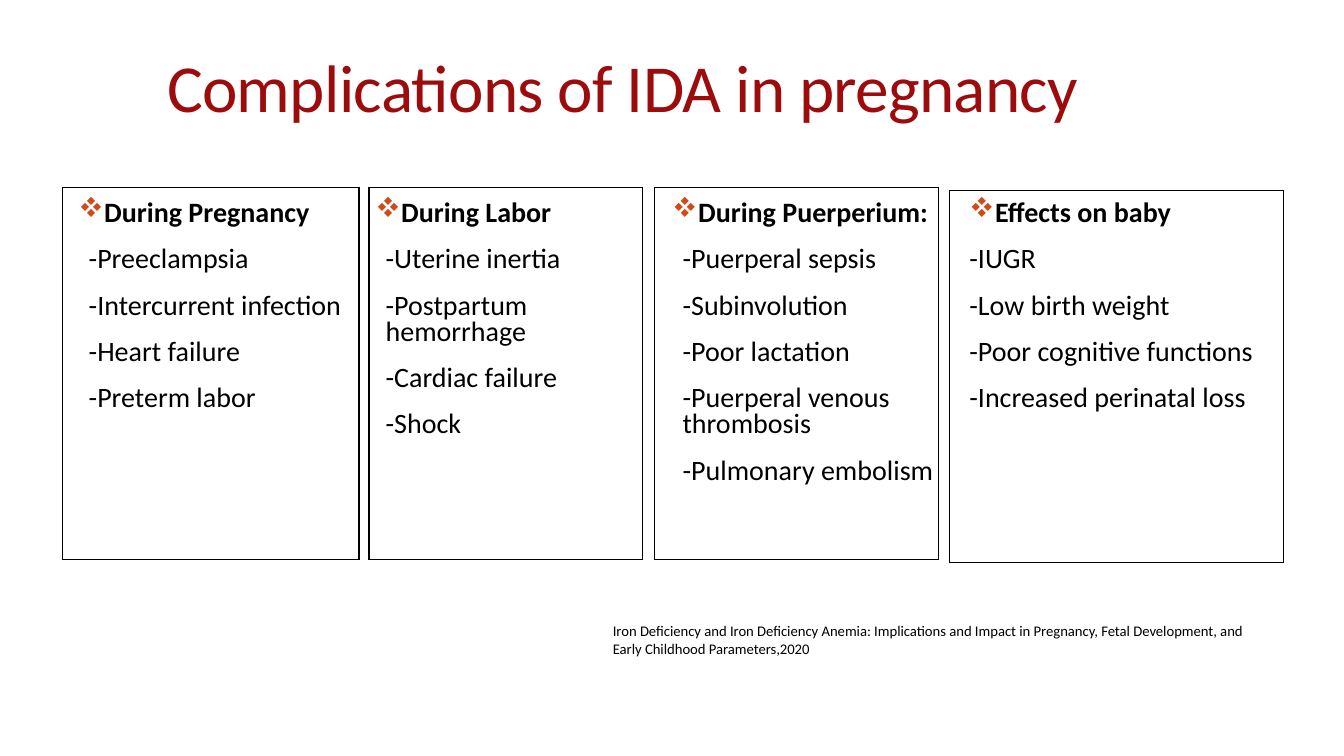
from dataclasses import dataclass

from lxml.etree import SubElement
from pptx import Presentation
from pptx.dml.color import RGBColor as RGB
from pptx.enum.text import MSO_ANCHOR
from pptx.oxml.ns import qn
from pptx.util import Inches, Pt


@dataclass(frozen=True)
class Theme:
    font: str = "Calibri"
    title_color: RGB = RGB(0x9D, 0x0C, 0x0C)
    ink: RGB = RGB(0, 0, 0)
    bullet: str = "D34817"
    border: str = "000000"
    title_size: int = 48
    body_size: int = 20
    source_size: float = 10.5


THEME = Theme()


def style(paragraph, size, color, bold=False):
    font = paragraph.font
    font.name, font.size, font.bold = THEME.font, Pt(size), bold
    font.color.rgb = color


def add_text_frame(left, top, width, height):
    frame = slide.shapes.add_textbox(
        Inches(left), Inches(top), Inches(width), Inches(height)).text_frame
    frame.word_wrap = True
    return frame


prs = Presentation()
prs.slide_width, prs.slide_height = Inches(13.33), Inches(7.5)
slide = prs.slides.add_slide(prs.slide_layouts[6])

# Title
title = add_text_frame(1.56, 0.37, 11, 0.93)
title.vertical_anchor = MSO_ANCHOR.BOTTOM
heading = title.paragraphs[0]
heading.line_spacing = 0.85
heading_run = heading.add_run()
heading_run.text = "Complications of IDA in pregnancy"
heading_run._r.get_or_add_rPr().set("spc", "-50")
style(heading, THEME.title_size, THEME.title_color)

# Complications: frame left, top, width, item indent, heading, items
stages = [
    (0.62, 1.86, 2.94, 0.1, "During Pregnancy",
     ["Preeclampsia", "Intercurrent infection", "Heart failure", "Preterm labor"]),
    (3.66, 1.86, 2.71, 0.1, "During Labor",
     ["Uterine inertia", "Postpartum hemorrhage", "Cardiac failure", "Shock"]),
    (6.49, 1.86, 2.82, 0.1, "During Puerperium:",
     ["Puerperal sepsis", "Subinvolution", "Poor lactation",
      "Puerperal venous thrombosis", "Pulmonary embolism"]),
    (9.42, 1.89, 3.31, 0, "Effects on baby",
     ["IUGR", "Low birth weight", "Poor cognitive functions", "Increased perinatal loss"]),
]
FRAME_HEIGHT = 3.69
TEXT_LEFT, TEXT_TOP, TEXT_WIDTH = 0.78, 1.95, 11.78 / len(stages)

for index, (left, top, width, indent, stage, items) in enumerate(stages):
    table = slide.shapes.add_table(
        1, 1, Inches(left), Inches(top), Inches(width), Inches(FRAME_HEIGHT)).table
    table.first_row = table.horz_banding = False
    cell = table.cell(0, 0)
    borders = cell._tc.get_or_add_tcPr()
    for side in ("lnL", "lnR", "lnT", "lnB"):
        line = SubElement(borders, qn(f"a:{side}"), w=str(Pt(1)))
        line_fill = SubElement(line, qn("a:solidFill"))
        SubElement(line_fill, qn("a:srgbClr"), val=THEME.border)
    cell.fill.background()

    column = add_text_frame(TEXT_LEFT + index * TEXT_WIDTH, TEXT_TOP, TEXT_WIDTH, 3.5)
    column.margin_left = column.margin_right = 0
    column.text = "\n".join([stage] + [f"-{item}" for item in items])
    for row, paragraph in enumerate(column.paragraphs):
        is_heading = row == 0
        paragraph.line_spacing = 0.79
        paragraph.space_before = Pt(0 if is_heading else 12)
        paragraph.space_after = Pt(2)
        layout = paragraph._p.get_or_add_pPr()
        layout.set("marL", str(Inches(0.1 if is_heading else indent)))
        layout.set("indent", str(Inches(-0.1 if is_heading else 0)))
        if is_heading:
            bullet_color = SubElement(layout, qn("a:buClr"))
            SubElement(bullet_color, qn("a:srgbClr"), val=THEME.bullet)
            # In Wingdings the letter v is the four-diamond bullet
            SubElement(layout, qn("a:buFont"), typeface="Wingdings", charset="2")
            SubElement(layout, qn("a:buChar"), char="v")
        style(paragraph, THEME.body_size, THEME.ink, bold=is_heading)

# Source
source = add_text_frame(5.98, 6.12, 6.67, 0.47)
citation = source.paragraphs[0]
citation.text = ("Iron Deficiency and Iron Deficiency Anemia: Implications and Impact in Pregnancy, "
                 "Fetal Development, and Early Childhood Parameters,2020")
style(citation, THEME.source_size, THEME.ink)

prs.save("out.pptx")
